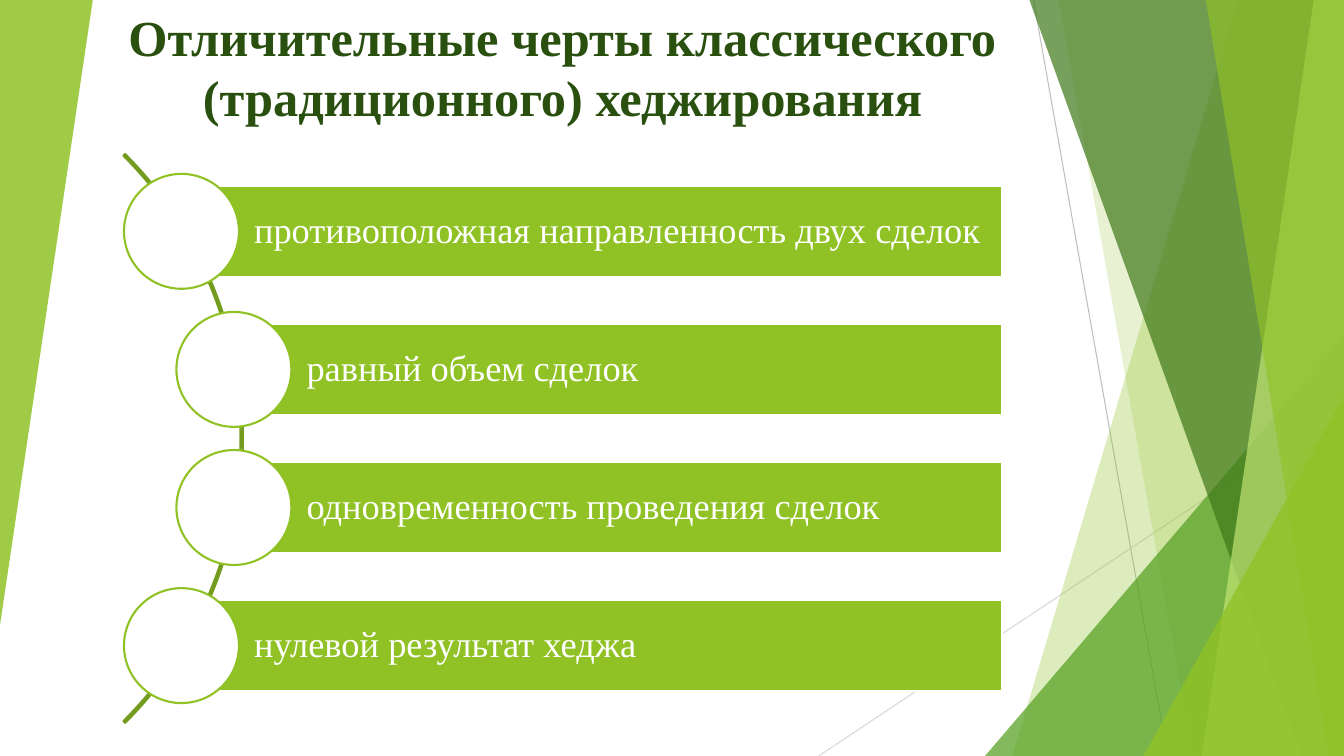
from dataclasses import dataclass

from lxml.etree import SubElement
from pptx import Presentation
from pptx.dml.color import RGBColor
from pptx.enum.shapes import MSO_CONNECTOR, MSO_SHAPE
from pptx.enum.text import MSO_ANCHOR, MSO_AUTO_SIZE, PP_ALIGN
from pptx.oxml.ns import qn
from pptx.shapes.autoshape import Shape
from pptx.slide import Slide
from pptx.util import Inches, Pt

WIDTH, HEIGHT = 13.33, 7.5
FONT = "Times New Roman"
GREEN, WHITE = "90C226", "FFFFFF"


@dataclass(frozen=True)
class Ray:
    start: tuple[float, float]
    end: tuple[float, float]
    color: str


@dataclass(frozen=True)
class Band:
    """Facet reaching the right edge; its slanted left side runs top to bottom."""
    top_x: float
    bottom_x: float
    color: str
    opacity: int


@dataclass(frozen=True)
class Wedge:
    left: float
    top: float
    width: float
    height: float
    color: str
    opacity: int
    rotation: int = 0


@dataclass(frozen=True)
class Feature:
    text: str
    bar_left: float


RAYS = [
    Ray((10.25, 0), (11.58, HEIGHT), "BFBFBF"),
    Ray((WIDTH, 4.03), (8.12, HEIGHT), "D9D9D9"),
]
FACETS = [
    Band(12.28, 10.04, GREEN, 30),
    Band(10.5, 11.83, GREEN, 20),
    Wedge(9.77, 3.33, 3.56, 4.17, "54A021", 72),
    Band(10.21, 12.91, "3F7819", 70),
    Band(13.03, 11.92, "C0E474", 70),
    Band(11.96, 13.18, GREEN, 65),
    Wedge(11.34, 3.93, 1.99, 3.57, GREEN, 80),
    Wedge(0, 0, 0.92, 6.2, GREEN, 85, 180),
]
FEATURES = [
    Feature("противоположная направленность двух сделок", 1.8),
    Feature("равный объем сделок", 2.32),
    Feature("одновременность проведения сделок", 2.32),
    Feature("нулевой результат хеджа", 1.8),
]
BAR_TOP, BAR_PITCH, BAR_HEIGHT, BAR_RIGHT = 1.84, 1.37, 0.91, 9.94
CIRCLE_SIZE = 1.14


def rgb(color: str) -> RGBColor:
    return RGBColor.from_string(color)


def paint(shape: Shape, fill: str | None, line: str | None = None,
          opacity: int = 100) -> None:
    shape.shadow.inherit = False
    if fill:
        shape.fill.solid()
        shape.fill.fore_color.rgb = rgb(fill)
        if opacity < 100:
            color = shape.element.spPr.find(f"{qn('a:solidFill')}/{qn('a:srgbClr')}")
            SubElement(color, qn("a:alpha")).set("val", str(opacity * 1000))
    else:
        shape.fill.background()
    if line:
        shape.line.color.rgb = rgb(line)
        shape.line.width = Pt(1.5)
    else:
        shape.line.fill.background()


def add_preset(slide: Slide, kind: MSO_SHAPE, left: float, top: float,
               width: float, height: float) -> Shape:
    return slide.shapes.add_shape(
        kind, Inches(left), Inches(top), Inches(width), Inches(height))


def add_ray(slide: Slide, ray: Ray) -> None:
    connector = slide.shapes.add_connector(
        MSO_CONNECTOR.STRAIGHT, *map(Inches, ray.start + ray.end))
    connector.line.color.rgb = rgb(ray.color)
    connector.line.width = Pt(0.75)
    SubElement(connector.element.spPr, qn("a:effectLst"))


def add_facet(slide: Slide, facet: Band | Wedge) -> None:
    if isinstance(facet, Band):
        builder = slide.shapes.build_freeform(Inches(facet.top_x), 0)
        corners = [(WIDTH, 0), (WIDTH, HEIGHT), (facet.bottom_x, HEIGHT)]
        builder.add_line_segments([(Inches(x), Inches(y)) for x, y in corners])
        shape = builder.convert_to_shape()
    else:
        shape = add_preset(slide, MSO_SHAPE.ISOSCELES_TRIANGLE, facet.left,
                           facet.top, facet.width, facet.height)
        shape.adjustments[0] = 1
        shape.rotation = facet.rotation
    paint(shape, facet.color, opacity=facet.opacity)


def format_title(title: Shape) -> None:
    title.left, title.top = Inches(0.22), Inches(0.55)
    title.width, title.height = Inches(10.72), Inches(0.76)
    frame = title.text_frame
    frame.text = "Отличительные черты классического (традиционного) хеджирования"
    frame.word_wrap = True
    frame.auto_size = MSO_AUTO_SIZE.NONE
    frame.vertical_anchor = MSO_ANCHOR.BOTTOM
    paragraph = frame.paragraphs[0]
    paragraph.alignment = PP_ALIGN.CENTER
    paragraph.font.name = FONT
    paragraph.font.size = Pt(36)
    paragraph.font.bold = True
    paragraph.font.color.rgb = rgb("2A5010")


def add_arc(slide: Slide) -> None:
    arc = add_preset(slide, MSO_SHAPE.BLOCK_ARC, -5.57, 0.36, 7.98, 7.98)
    for index, value in enumerate((189, 27, 0.003)):
        arc.adjustments[index] = value
    paint(arc, None, "739B1E")


def add_feature(slide: Slide, feature: Feature, top: float) -> None:
    bar = add_preset(slide, MSO_SHAPE.RECTANGLE, feature.bar_left, top,
                     BAR_RIGHT - feature.bar_left, BAR_HEIGHT)
    paint(bar, GREEN, WHITE)
    frame = bar.text_frame
    frame.text = feature.text
    frame.word_wrap = True
    frame.vertical_anchor = MSO_ANCHOR.MIDDLE
    frame.margin_left = Inches(0.72)
    frame.margin_top = frame.margin_right = frame.margin_bottom = Inches(0.07)
    paragraph = frame.paragraphs[0]
    paragraph.alignment = PP_ALIGN.LEFT
    paragraph.line_spacing = 0.9
    paragraph.font.name = FONT
    paragraph.font.size = Pt(26)
    paragraph.font.color.rgb = rgb(WHITE)

    circle = add_preset(slide, MSO_SHAPE.OVAL, feature.bar_left - CIRCLE_SIZE / 2,
                        top + (BAR_HEIGHT - CIRCLE_SIZE) / 2, CIRCLE_SIZE, CIRCLE_SIZE)
    paint(circle, WHITE, GREEN)


def main() -> None:
    presentation = Presentation()
    presentation.slide_width = Inches(WIDTH)
    presentation.slide_height = Inches(HEIGHT)
    slide = presentation.slides.add_slide(presentation.slide_layouts[5])
    format_title(slide.shapes.title)
    for ray in RAYS:
        add_ray(slide, ray)
    for facet in FACETS:
        add_facet(slide, facet)
    add_arc(slide)
    for row, feature in enumerate(FEATURES):
        add_feature(slide, feature, BAR_TOP + row * BAR_PITCH)
    presentation.save("out.pptx")


if __name__ == "__main__":
    main()
